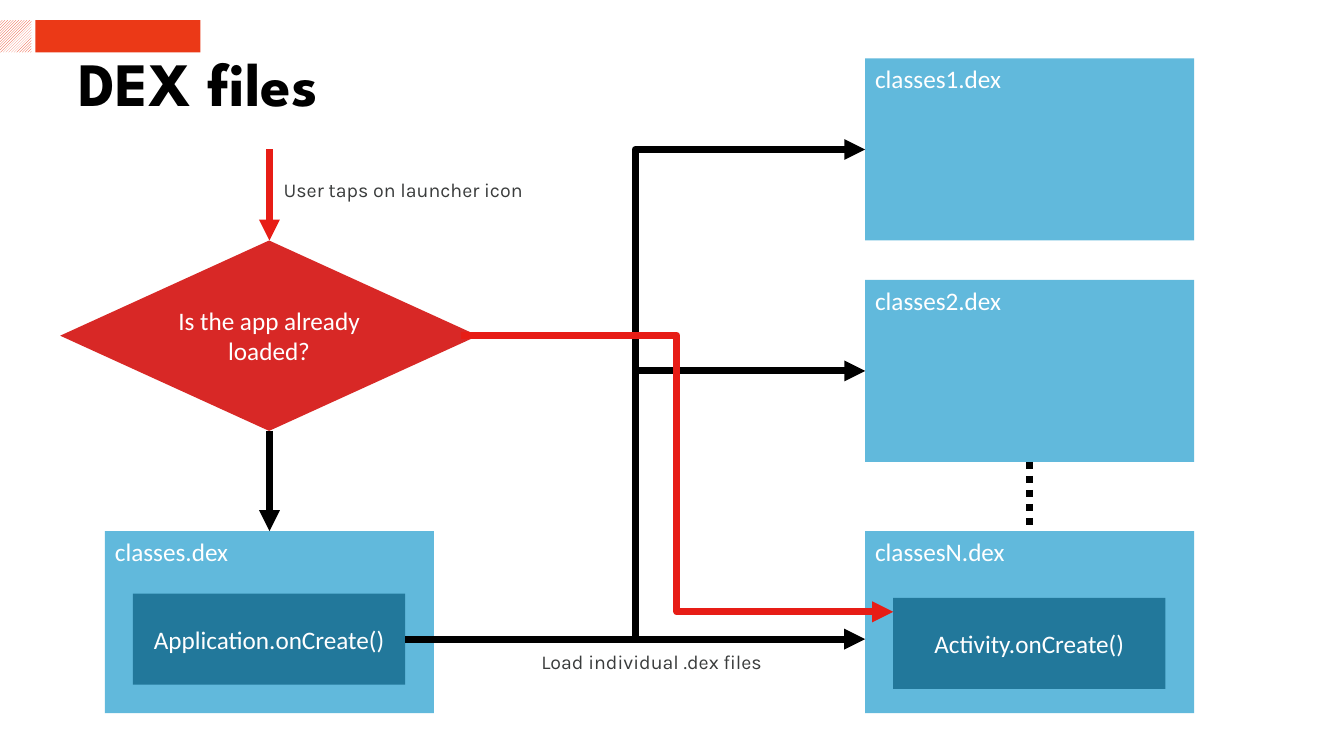
from dataclasses import dataclass
from typing import Any

from lxml import etree
from pptx import Presentation
from pptx import util as u
from pptx.dml.color import RGBColor
from pptx.enum import dml, shapes, text
from pptx.oxml import ns


@dataclass(frozen=True)
class Theme:
    white: str = "FFFFFF"
    black: str = "000000"
    grey: str = "3A3C3C"
    brand: str = "EB3917"
    sky: str = "61B9DC"
    deep: str = "22789B"
    stop: str = "D82826"
    hot: str = "E71D16"
    head: str = "League Spartan"
    body: str = "Calibri"
    note: str = "Karla"
    title: int = 44
    main: int = 18
    small: int = 14
    line: int = 5


@dataclass(frozen=True)
class Box:
    words: str
    left: float
    top: float
    width: float
    height: float
    fill: str
    inner: bool = True
    kind: Any = shapes.MSO_SHAPE.RECTANGLE


@dataclass(frozen=True)
class Link:
    start: tuple[float, float]
    end: tuple[float, float]
    tint: str
    dots: bool = False


@dataclass(frozen=True)
class Note:
    words: str
    left: float
    top: float
    width: float


THEME = Theme()


def rgb(code: str) -> RGBColor:
    return RGBColor.from_string(code)


def style(par: Any, face: str, size: int, tint: str) -> None:
    par.font.name = face
    par.font.size = u.Pt(size)
    par.font.color.rgb = rgb(tint)


def draw_box(slide: Any, box: Box) -> Any:
    shape = slide.shapes.add_shape(
        box.kind, u.Pt(box.left), u.Pt(box.top), u.Pt(box.width), u.Pt(box.height))
    shape.shadow.inherit = False
    shape.fill.solid()
    shape.fill.fore_color.rgb = rgb(box.fill)
    shape.line.fill.background()
    if box.words:
        frame = shape.text_frame
        frame.text = box.words
        frame.vertical_anchor = (
            text.MSO_ANCHOR.MIDDLE if box.inner else text.MSO_ANCHOR.TOP)
        par = frame.paragraphs[0]
        par.alignment = text.PP_ALIGN.CENTER if box.inner else text.PP_ALIGN.LEFT
        style(par, THEME.body, THEME.main, THEME.white)
    return shape


def draw_link(slide: Any, link: Link) -> None:
    (x1, y1), (x2, y2) = link.start, link.end
    bent = x1 != x2 and y1 != y2
    kind = shapes.MSO_CONNECTOR.ELBOW if bent else shapes.MSO_CONNECTOR.STRAIGHT
    wire = slide.shapes.add_connector(kind, u.Pt(x1), u.Pt(y1), u.Pt(x2), u.Pt(y2))
    wire.line.color.rgb = rgb(link.tint)
    wire.line.width = u.Pt(THEME.line)
    if link.dots:
        wire.line.dash_style = dml.MSO_LINE.ROUND_DOT
    else:
        tail = etree.SubElement(wire.line._get_or_add_ln(), ns.qn("a:tailEnd"))
        tail.set("type", "triangle")
    etree.SubElement(wire._element.spPr, ns.qn("a:effectLst"))


def draw_note(slide: Any, note: Note) -> None:
    shape = slide.shapes.add_textbox(
        u.Pt(note.left), u.Pt(note.top), u.Pt(note.width), u.Pt(24.5))
    frame = shape.text_frame
    frame.word_wrap = False
    frame.auto_size = text.MSO_AUTO_SIZE.SHAPE_TO_FIT_TEXT
    frame.text = note.words
    style(frame.paragraphs[0], THEME.note, THEME.small, THEME.grey)


def draw_title(slide: Any, words: str) -> None:
    title = slide.shapes.title
    title.left, title.top = u.Pt(55.4), u.Pt(41.8)
    title.width, title.height = u.Pt(735), u.Pt(41)
    frame = title.text_frame
    frame.text = words
    frame.auto_size = text.MSO_AUTO_SIZE.NONE
    frame.vertical_anchor = text.MSO_ANCHOR.TOP
    frame.margin_left = frame.margin_right = u.Pt(0.7)
    frame.margin_top = frame.margin_bottom = u.Pt(0.7)
    par = frame.paragraphs[0]
    par.alignment = text.PP_ALIGN.LEFT
    par.line_spacing = 0.8
    style(par, THEME.head, THEME.title, THEME.black)
    par.font.bold = True


def draw_brand(slide: Any) -> None:
    hatch = draw_box(slide, Box("", 0, 14.4, 22.5, 23, THEME.white))
    hatch.fill.patterned()
    hatch.fill.pattern = dml.MSO_PATTERN.LIGHT_UPWARD_DIAGONAL
    hatch.fill.fore_color.rgb = rgb(THEME.brand)
    hatch.fill.back_color.rgb = rgb(THEME.white)
    draw_box(slide, Box("", 25.2, 14.4, 118, 23, THEME.brand))


def main() -> None:
    deck = Presentation()
    deck.slide_width, deck.slide_height = u.Pt(960), u.Pt(540)
    slide = deck.slides.add_slide(deck.slide_layouts[5])
    draw_brand(slide)
    draw_title(slide, "DEX files")

    near, far, wide, high = 75, 618, 235, 130
    first, second, last = 41.8, 200, 379.4
    files = [("classes.dex", near, last), ("classes1.dex", far, first),
             ("classes2.dex", far, second), ("classesN.dex", far, last)]
    for words, left, top in files:
        draw_box(slide, Box(words, left, top, wide, high, THEME.sky, False))
    calls = [("Application.onCreate()", near + 20, 424),
             ("Activity.onCreate()", far + 20, 427)]
    for words, left, top in calls:
        draw_box(slide, Box(words, left, top, 194.5, 65, THEME.deep))
    draw_box(slide, Box("Is the app already loaded?", 43, 171.8, 298.5, 136,
                        THEME.stop, kind=shapes.MSO_SHAPE.DIAMOND))

    mid, load = near + wide / 2, 456.5
    stack = far + wide / 2
    links = [Link((stack, second + high), (stack, last), THEME.black, True),
             Link((mid, 307.8), (mid, last), THEME.black)]
    for goal in (first + high / 2, second + high / 2, load):
        links.append(Link((289.5, load), (far, goal), THEME.black))
    links += [Link((329, 239.5), (far + 20, 437), THEME.hot),
              Link((mid, 106.8), (mid, 171.8), THEME.hot)]
    for link in links:
        draw_link(slide, link)

    draw_note(slide, Note("User taps on launcher icon", 195.5, 123.4, 188.5))
    draw_note(slide, Note("Load individual .dex files", 379.6, 461, 174))
    deck.save("out.pptx")


if __name__ == "__main__":
    main()
